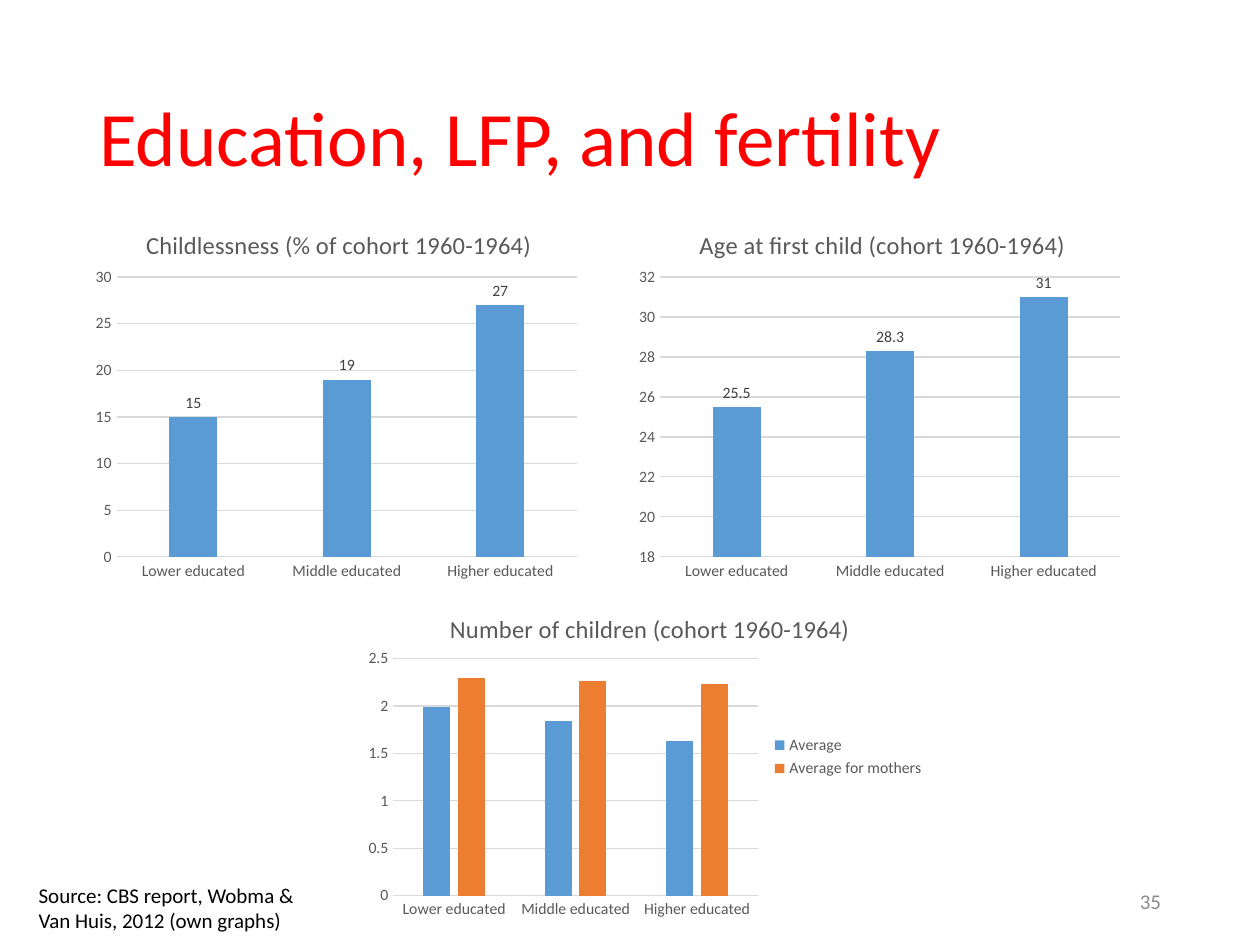
from lxml.etree import SubElement, Element
from pptx import Presentation
from pptx.chart.data import CategoryChartData
from pptx.dml.color import RGBColor
from pptx.enum.chart import XL_CHART_TYPE, XL_LABEL_POSITION, XL_LEGEND_POSITION, XL_TICK_MARK
from pptx.enum.text import MSO_ANCHOR, PP_ALIGN
from pptx.oxml.ns import qn
from pptx.util import Pt

LEVELS = ["Lower educated", "Middle educated", "Higher educated"]
BLUE, ORANGE = "5B9BD5", "ED7D31"
GRAY, PALE, DARK = "595959", "D9D9D9", "404040"


def color(code):
    return RGBColor.from_string(code)


def style(font, size, code):
    font.name = "Calibri"
    font.size = Pt(size)
    font.bold = False
    font.color.rgb = color(code)


def write(frame, text, size=12, code="000000", align=PP_ALIGN.LEFT,
          anchor=MSO_ANCHOR.TOP, space=None):
    frame.word_wrap = True
    frame.vertical_anchor = anchor
    part = frame.paragraphs[0]
    part.alignment = align
    part.line_spacing = space
    run = part.add_run()
    run.text = text
    style(run.font, size, code)


def layout(owner, after, inner=False, **place):
    node = owner.find(qn("c:layout"))
    if node is None:
        node = Element(qn("c:layout"))
        owner.insert(after, node)
    manual = SubElement(node, qn("c:manualLayout"))
    items = {"xMode": "edge", "yMode": "edge", **place}
    if inner:
        items = {"layoutTarget": "inner", **items}
    for name, value in items.items():
        SubElement(manual, qn(f"c:{name}")).set("val", str(value))


class Deck:
    def __init__(self):
        self.show = Presentation()
        self.show.slide_width, self.show.slide_height = Pt(720), Pt(540)
        self.slide = self.show.slides.add_slide(self.show.slide_layouts[5])

    def title(self, text, *box):
        shape = self.slide.shapes.title
        shape.left, shape.top, shape.width, shape.height = map(Pt, box)
        write(shape.text_frame, text, size=44, code="FF0000",
              anchor=MSO_ANCHOR.MIDDLE, space=0.9)

    def text(self, text, *box, **format):
        shape = self.slide.shapes.add_textbox(*map(Pt, box))
        write(shape.text_frame, text, **format)

    def chart(self, title, series, box, head, plot, scale, legend=False):
        data = CategoryChartData()
        data.categories = LEVELS
        for name, values in series.items():
            data.add_series(name, values)
        chart = self.slide.shapes.add_chart(
            XL_CHART_TYPE.COLUMN_CLUSTERED, *map(Pt, box), data).chart
        style(chart.font, 10, "000000")
        chart.has_title = True
        write(chart.chart_title.text_frame, title, size=14, code=GRAY,
              align=PP_ALIGN.CENTER)
        chart.chart_title.include_in_layout = False
        layout(chart.chart_title._element, 1, x=head[0], y=head[1])
        layout(chart._chartSpace.chart.plotArea, 0, inner=True,
               **dict(zip("xywh", plot)))
        self.axes(chart, *scale)
        bars = chart.plots[0]
        bars.gap_width, bars.overlap = 219, -27
        bars.vary_by_categories = False
        for item, code in zip(bars.series, (BLUE, ORANGE)):
            item.format.fill.solid()
            item.format.fill.fore_color.rgb = color(code)
        chart.has_legend = legend
        if legend:
            chart.legend.position = XL_LEGEND_POSITION.RIGHT
            chart.legend.include_in_layout = False
            style(chart.legend.font, 9, GRAY)
        else:
            bars.has_data_labels = True
            labels = bars.data_labels
            labels.show_value = True
            labels.position = XL_LABEL_POSITION.OUTSIDE_END
            style(labels.font, 9, DARK)

    def axes(self, chart, low, high, step):
        for axis in (chart.category_axis, chart.value_axis):
            axis.major_tick_mark = axis.minor_tick_mark = XL_TICK_MARK.NONE
            style(axis.tick_labels.font, 9, GRAY)
        values = chart.value_axis
        values.minimum_scale, values.maximum_scale = low, high
        values.major_unit = step
        values.has_major_gridlines = True
        values.format.line.fill.background()
        for line in (chart.category_axis.format.line,
                     values.major_gridlines.format.line):
            line.color.rgb = color(PALE)
            line.width = Pt(0.75)


def main():
    deck = Deck()
    deck.title("Education, LFP, and fertility", 49.5, 28.75, 621, 104.4)
    deck.text("35", 508.5, 500.5, 162, 28.75, code="8C8C8C",
              align=PP_ALIGN.RIGHT, anchor=MSO_ANCHOR.MIDDLE)
    wide = (0.06, 0.19, 0.92, 0.73)
    deck.chart("Childlessness (% of cohort 1960-1964)",
               {"Series 1": (15, 19, 27)}, (49.5, 116.75, 286, 219),
               (0.11, 0.05), wide, (0, 30, 5))
    deck.chart("Age at first child (cohort 1960-1964)",
               {"Series 1": (25.5, 28.3, 31)}, (360, 116.75, 286, 219),
               (0.13, 0.05), wide, (18, 32, 2))
    deck.chart("Number of children (cohort 1960-1964)",
               {"Average": (1.99, 1.84, 1.63),
                "Average for mothers": (2.3, 2.26, 2.23)},
               (205, 335.75, 330.5, 193.5), (0.15, 0.06),
               (0.06, 0.21, 0.63, 0.7), (0, 2.5, 0.5), legend=True)
    deck.text("Source: CBS report, Wobma & Van Huis, 2012 (own graphs)",
              15, 500.5, 165.5, 36)
    deck.show.save("out.pptx")


if __name__ == "__main__":
    main()
